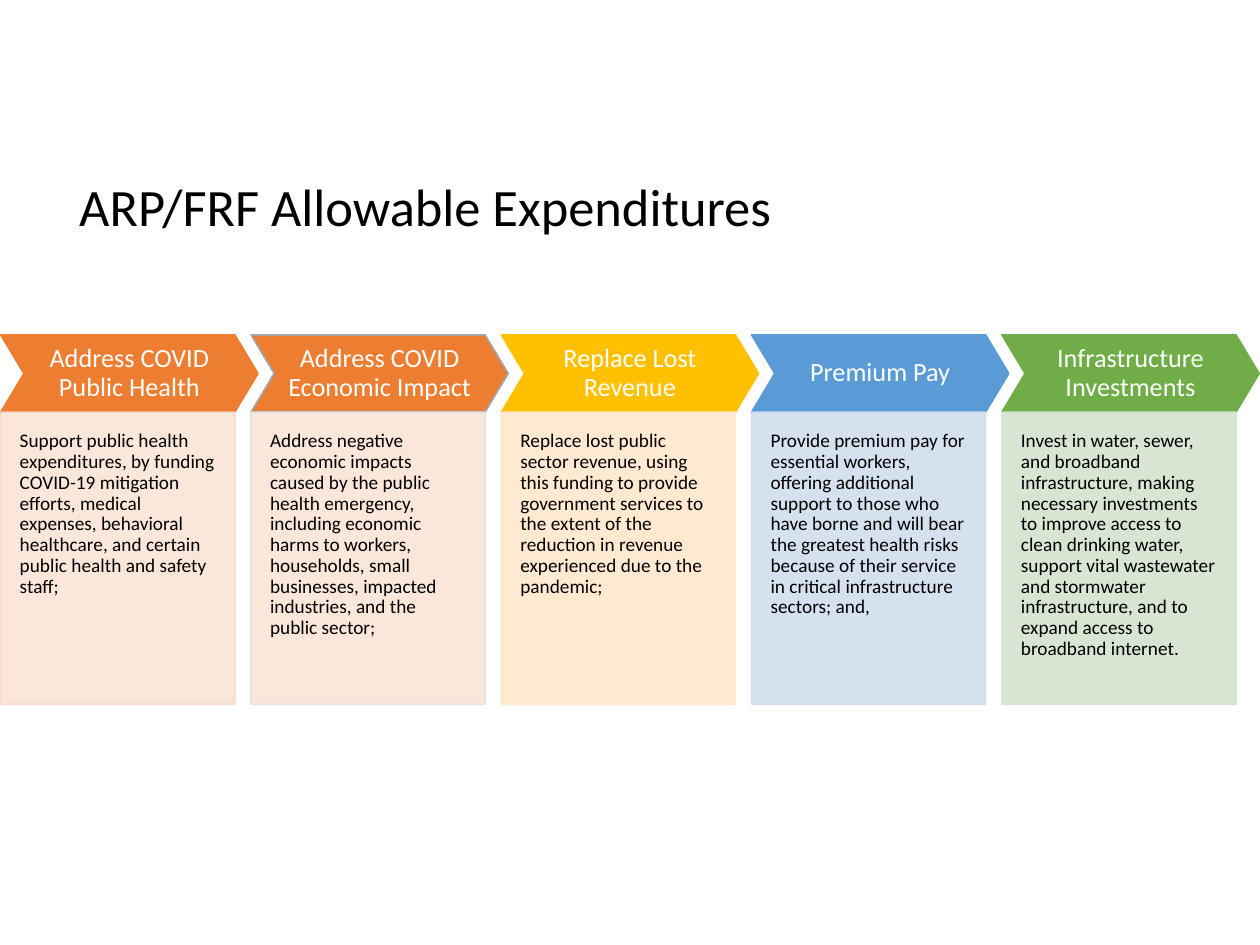
from lxml.etree import SubElement
from pptx import Presentation
from pptx.dml.color import RGBColor
from pptx.enum.shapes import MSO_SHAPE
from pptx.enum.text import MSO_ANCHOR, PP_ALIGN
from pptx.oxml.ns import qn
from pptx.util import Pt

HUES = {
    "black": "000000", "white": "FFFFFF", "gray": "A5A5A5",
    "orange": "ED7D31", "gold": "FFC000", "blue": "5B9BD5", "green": "70AD47",
    "peach": "FBE5D6", "rose": "F8D7CE", "mist": "E1E1E1",
    "cream": "FFE8CC", "sky": "D2DEEF", "sage": "D5E3CF",
}

STEPS = [
    ("Address COVID Public Health", "orange", "orange", "peach", "rose",
     "Support public health expenditures, by funding COVID-19 mitigation efforts, "
     "medical expenses, behavioral healthcare, and certain public health and safety staff;"),
    ("Address COVID Economic Impact", "orange", "gray", "peach", "mist",
     "Address negative economic impacts caused by the public health emergency, including "
     "economic harms to workers, households, small businesses, impacted industries, "
     "and the public sector;"),
    ("Replace Lost Revenue", "gold", "gold", "cream", "cream",
     "Replace lost public sector revenue, using this funding to provide government services "
     "to the extent of the reduction in revenue experienced due to the pandemic;"),
    ("Premium Pay", "blue", "blue", "sky", "sky",
     "Provide premium pay for essential workers, offering additional support to those who "
     "have borne and will bear the greatest health risks because of their service in "
     "critical infrastructure sectors; and,"),
    ("Infrastructure Investments", "green", "green", "sage", "sage",
     "Invest in water, sewer, and broadband infrastructure, making necessary investments to "
     "improve access to clean drinking water, support vital wastewater and stormwater "
     "infrastructure, and to expand access to broadband internet."),
]


def paint(fill, hue, alpha=100):
    """Fill with a solid colour at the given opacity in percent."""
    fill.solid()
    fill.fore_color.rgb = RGBColor.from_string(HUES[hue])
    if alpha < 100:
        for tag in fill._xPr.iter(qn("a:solidFill")):
            SubElement(tag[0], qn("a:alpha"), val=str(alpha * 1000))
            break


def write(shape, words, size, hue, align, anchor, pads):
    """Write one paragraph inside a shape, with pads left, top, right, bottom."""
    frame = shape.text_frame
    frame.word_wrap = True
    frame.vertical_anchor = anchor
    frame.margin_left, frame.margin_top, frame.margin_right, frame.margin_bottom = map(Pt, pads)
    para = frame.paragraphs[0]
    para.alignment = align
    para.line_spacing = 0.9
    run = para.add_run()
    run.text = words
    run.font.name = "Calibri"
    run.font.size = Pt(size)
    run.font.color.rgb = RGBColor.from_string(HUES[hue])


def block(slide, kind, box, fill, edge, alpha=100):
    """Add a flat shape with a thin outline."""
    shape = slide.shapes.add_shape(kind, *map(Pt, box))
    shape.shadow.inherit = False
    paint(shape.fill, fill, alpha)
    paint(shape.line.fill, edge, alpha)
    shape.line.width = Pt(1)
    return shape


def title(slide, box, words):
    """Add the slide title."""
    shape = slide.shapes.add_textbox(*map(Pt, box))
    write(shape, words, 30, "black", PP_ALIGN.LEFT, MSO_ANCHOR.MIDDLE, (7.2, 3.6, 7.2, 3.6))


def column(slide, box, step):
    """Add one step: a chevron head above a panel of detail."""
    left, top, width, height = box
    head, fill, edge, pale, rim, words = step
    tall = 44.1
    arrow = block(slide, MSO_SHAPE.CHEVRON, (left, top, width, tall), fill, edge)
    arrow.adjustments[0] = 0.3
    write(arrow, head, 15, "white", PP_ALIGN.CENTER, MSO_ANCHOR.MIDDLE, (5.8,) * 4)
    slim = width - 0.3 * tall
    panel = block(slide, MSO_SHAPE.RECTANGLE, (left, top + tall, slim, height - tall),
                  pale, rim, 90)
    write(panel, words, 11, "black", PP_ALIGN.LEFT, MSO_ANCHOR.TOP, (10.8, 10.8, 10.8, 20.9))


def process(slide, box, steps):
    """Spread the steps evenly across the box."""
    left, top, width, height = box
    wide = 146.9
    pitch = (width - wide) / (len(steps) - 1)
    for i, step in enumerate(steps):
        column(slide, (left + i * pitch, top, wide, height), step)


def main():
    """Build and save the slide."""
    deck = Presentation()
    deck.slide_width, deck.slide_height = Pt(720), Pt(540)
    slide = deck.slides.add_slide(deck.slide_layouts[6])
    title(slide, (38.2, 86.4, 643.7, 67), "ARP/FRF Allowable Expenditures")
    process(slide, (0.5, 191.4, 719, 211.1), STEPS)
    deck.save("out.pptx")


if __name__ == "__main__":
    main()
